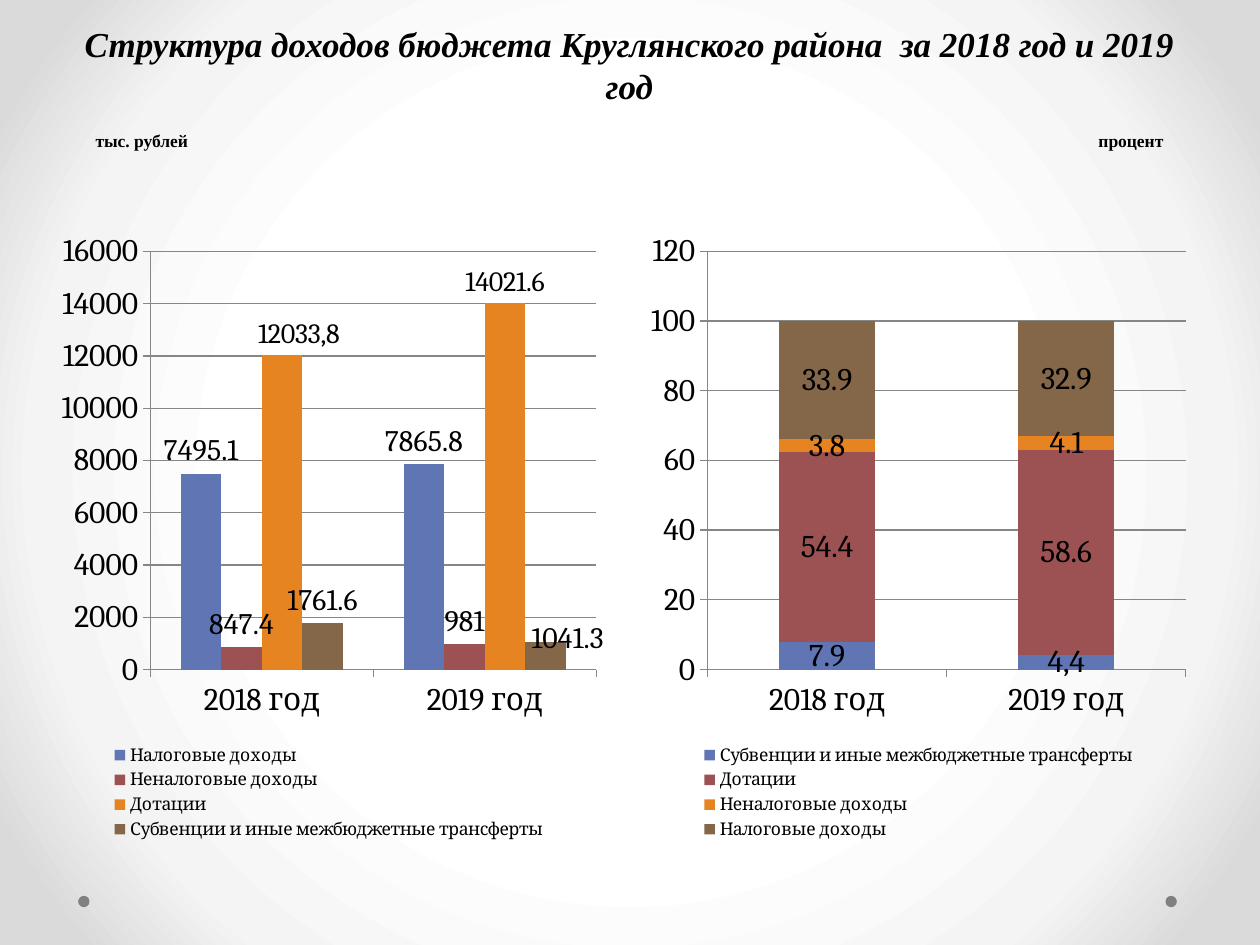
from lxml.etree import SubElement
from pptx import Presentation
from pptx.chart.data import CategoryChartData
from pptx.dml.color import RGBColor
from pptx.enum.chart import XL_CHART_TYPE, XL_LABEL_POSITION, XL_LEGEND_POSITION, XL_TICK_MARK
from pptx.enum.shapes import MSO_SHAPE
from pptx.enum.text import MSO_ANCHOR, PP_ALIGN
from pptx.oxml import parse_xml
from pptx.oxml.ns import nsdecls, qn
from pptx.util import Inches, Pt

TITLE = "Структура доходов бюджета Круглянского района  за 2018 год и 2019 год"
UNITS = [("тыс. рублей", 0.59, 1.07, PP_ALIGN.CENTER), ("процент", 8.62, 0.94, PP_ALIGN.LEFT)]
YEARS = ["2018 год", "2019 год"]
TAX, NON_TAX = "Налоговые доходы", "Неналоговые доходы"
GRANTS, SUBVENTIONS = "Дотации", "Субвенции и иные межбюджетные трансферты"
SERIES_COLORS = ["6076B4", "9C5252", "E68422", "846648"]
AMOUNTS = {
    "left": 0.4, "kind": XL_CHART_TYPE.COLUMN_CLUSTERED, "label_sizes": [17, 17, 16, 17],
    "series": [(TAX, (7495.1, 7865.8)), (NON_TAX, (847.4, 981)),
               (GRANTS, (12033.8, 14021.6)), (SUBVENTIONS, (1761.6, 1041.3))],
    "texts": [(2, 0, "12033,8")],
    "shifts": [(2, 0, 0.03, 0), (3, 1, 0.04, 0.03)],
}
SHARES = {
    "left": 5.08, "kind": XL_CHART_TYPE.COLUMN_STACKED, "label_sizes": [18] * 4,
    "series": [(SUBVENTIONS, (7.9, 4.3)), (GRANTS, (54.4, 58.6)),
               (NON_TAX, (3.8, 4.1)), (TAX, (33.9, 32.9))],
    "texts": [(0, 1, "4,4")],
    "shifts": [],
}
BACKGROUND_STOPS = [(50, "FFFFFF"), (76, "F4F4F4"), (92, "DADADA")]
DOT_LEFTS = [0.62, 9.25]


def rgb(value):
    return RGBColor.from_string(value)


def style(font, size, name, bold=None, italic=None):
    font.size, font.name, font.bold, font.italic = Pt(size), name, bold, italic
    font.color.rgb = rgb("000000")


def paint_background(slide):
    slide.background.fill.solid()
    solid = slide.background.fill._xPr.find(qn("a:solidFill"))
    stops = "".join(f'<a:gs pos="{position * 1000}"><a:srgbClr val="{color}"/></a:gs>'
                    for position, color in BACKGROUND_STOPS)
    gradient = parse_xml(
        f'<a:gradFill {nsdecls("a")} rotWithShape="1"><a:gsLst>{stops}</a:gsLst>'
        '<a:path path="circle"><a:fillToRect l="50000" t="50000" r="50000" b="50000"/>'
        '</a:path></a:gradFill>')
    solid.getparent().replace(solid, gradient)


def add_dot(slide, left):
    dot = slide.shapes.add_shape(MSO_SHAPE.OVAL, Inches(left), Inches(7.11), Inches(0.09), Inches(0.09))
    dot.shadow.inherit = False
    dot.fill.solid()
    dot.fill.fore_color.rgb = rgb("808080")
    dot.line.fill.background()


def add_title(slide):
    title = slide.shapes.title
    title.left, title.top, title.width, title.height = map(Inches, (0.43, 0.13, 9.13, 0.77))
    title.text_frame.text = TITLE
    title.text_frame.vertical_anchor = MSO_ANCHOR.MIDDLE
    heading = title.text_frame.paragraphs[0]
    heading.alignment = PP_ALIGN.CENTER
    style(heading.font, 20, "Times New Roman", True, True)


def add_unit(slide, text, left, width, alignment):
    frame = slide.shapes.add_textbox(Inches(left), Inches(0.98), Inches(width), Inches(0.27)).text_frame
    frame.word_wrap = True
    frame.text = text
    unit = frame.paragraphs[0]
    unit.alignment = alignment
    style(unit.font, 10, "Times New Roman", True)


def shift_label(series, point, x, y):
    series.points[point].data_label.position = XL_LABEL_POSITION.OUTSIDE_END
    label = series._element.xpath(f"c:dLbls/c:dLbl[c:idx/@val='{point}']")[0]
    layout = parse_xml(f'<c:layout {nsdecls("c")}/>')
    manual = SubElement(layout, qn("c:manualLayout"))
    for axis, offset in (("x", x), ("y", y)):
        SubElement(manual, qn(f"c:{axis}")).set("val", str(offset))
    label.find(qn("c:idx")).addnext(layout)


def add_budget_chart(slide, content):
    data = CategoryChartData()
    data.categories = YEARS
    for name, values in content["series"]:
        data.add_series(name, values)
    chart = slide.shapes.add_chart(content["kind"], Inches(content["left"]), Inches(1.75),
                                   Inches(4.42), Inches(4.95), data).chart
    style(chart.font, 18, "Cambria")
    chart.has_title = False
    chart.has_legend = True
    chart.legend.position = XL_LEGEND_POSITION.BOTTOM
    chart.legend.include_in_layout = False
    style(chart.legend.font, 10, "Cambria")
    for axis in (chart.category_axis, chart.value_axis):
        axis.major_tick_mark = XL_TICK_MARK.OUTSIDE
        axis.format.line.color.rgb = rgb("868686")
    chart.value_axis.has_major_gridlines = True
    chart.value_axis.major_gridlines.format.line.color.rgb = rgb("868686")

    plot = chart.plots[0]
    plot.gap_width = 150
    plot.vary_by_categories = False
    clustered = content["kind"] == XL_CHART_TYPE.COLUMN_CLUSTERED
    plot.overlap = 0 if clustered else 100
    for series, color, size in zip(plot.series, SERIES_COLORS, content["label_sizes"]):
        series.format.fill.solid()
        series.format.fill.fore_color.rgb = rgb(color)
        labels = series.data_labels
        labels.show_value = True
        labels.position = XL_LABEL_POSITION.OUTSIDE_END if clustered else XL_LABEL_POSITION.CENTER
        style(labels.font, size, "Cambria")
    for row, point, text in content["texts"]:
        frame = plot.series[row].points[point].data_label.text_frame
        frame.text = text
        style(frame.paragraphs[0].runs[0].font, content["label_sizes"][row], "Cambria")
    for row, point, x, y in content["shifts"]:
        series = plot.series[row]
        if (row, point) not in [entry[:2] for entry in content["texts"]]:
            style(series.points[point].data_label.font, content["label_sizes"][row], "Cambria")
        shift_label(series, point, x, y)


def main():
    """Build the budget revenue structure slide."""
    deck = Presentation()
    deck.slide_width, deck.slide_height = Inches(10), Inches(7.5)
    slide = deck.slides.add_slide(deck.slide_layouts[5])
    paint_background(slide)
    for left in DOT_LEFTS:
        add_dot(slide, left)
    add_title(slide)
    for unit in UNITS:
        add_unit(slide, *unit)
    for content in (SHARES, AMOUNTS):
        add_budget_chart(slide, content)
    deck.save("out.pptx")


if __name__ == "__main__":
    main()
